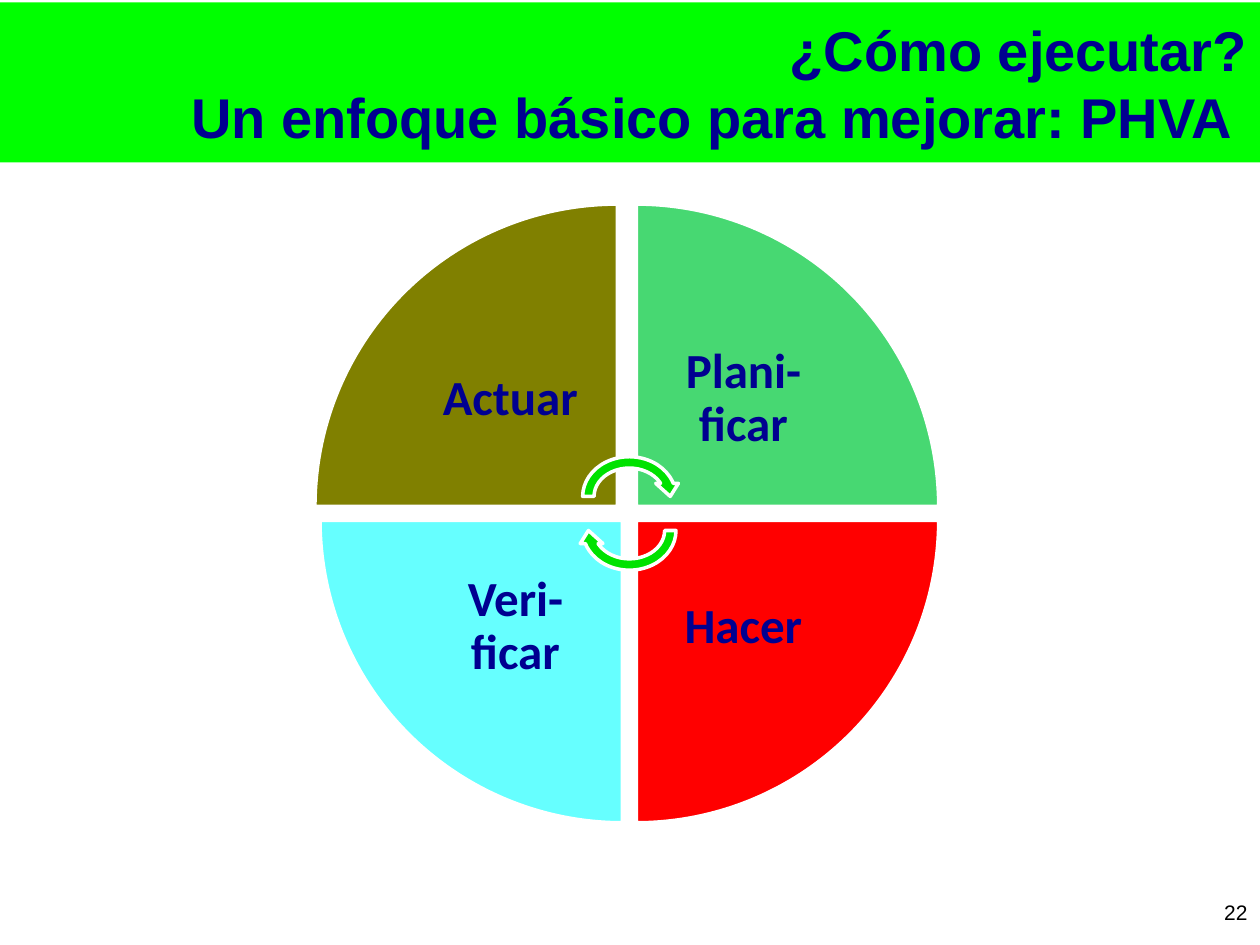
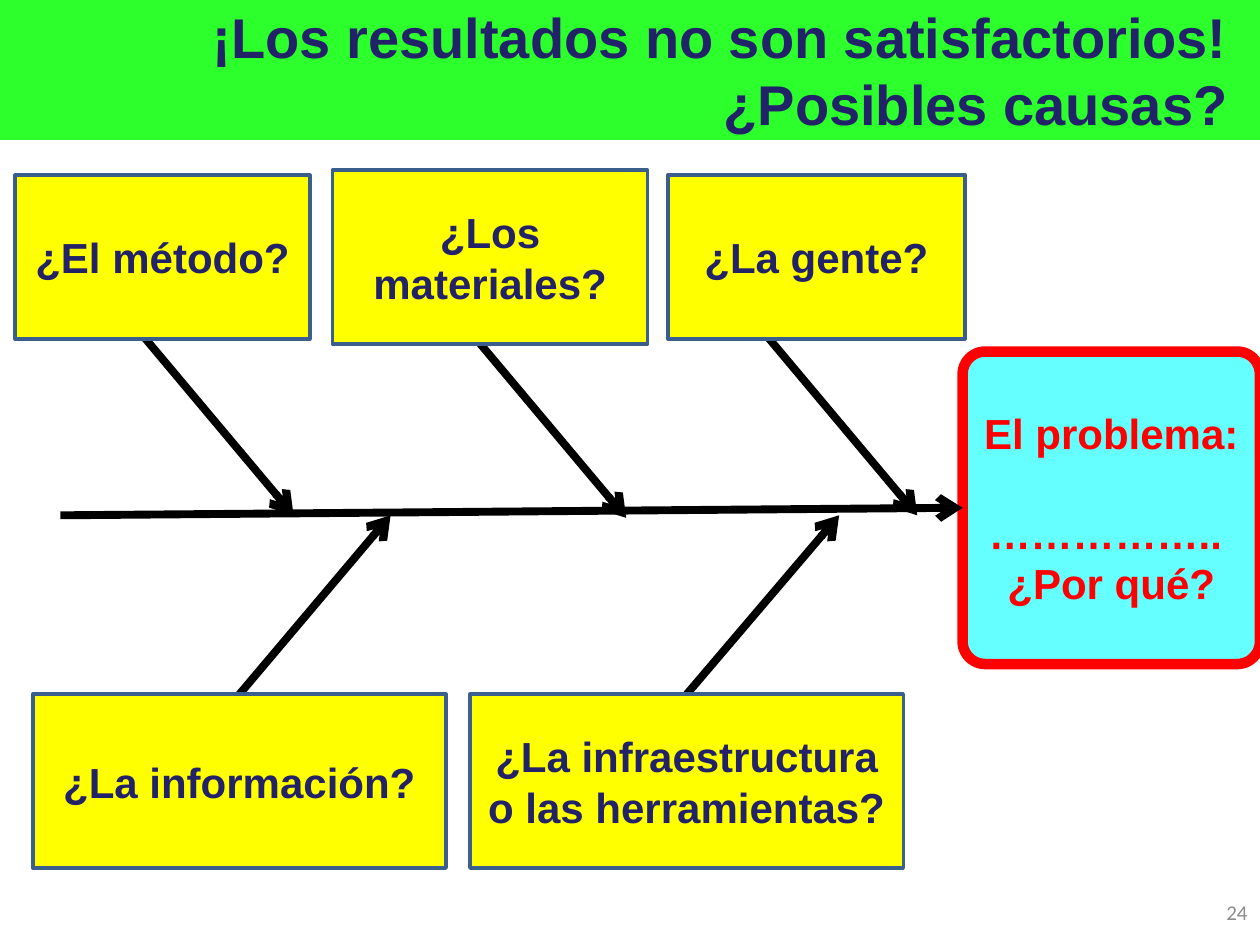
from lxml import etree
from pptx import Presentation
from pptx.dml.color import RGBColor
from pptx.enum.shapes import MSO_CONNECTOR, MSO_SHAPE
from pptx.enum.text import MSO_ANCHOR, PP_ALIGN
from pptx.oxml.ns import qn
from pptx.util import Inches, Pt

RECT, ROUND = MSO_SHAPE.RECTANGLE, MSO_SHAPE.ROUNDED_RECTANGLE
WEDGE, CYCLE_ARROW = MSO_SHAPE.PIE_WEDGE, MSO_SHAPE.CIRCULAR_ARROW
STRAIGHT = MSO_CONNECTOR.STRAIGHT
MIDDLE = MSO_ANCHOR.MIDDLE
CENTER, RIGHT = PP_ALIGN.CENTER, PP_ALIGN.RIGHT
TOP_SIDE, LEFT_SIDE = 0, 1

WHITE = RGBColor(0xFF, 0xFF, 0xFF)
BLACK = RGBColor(0x00, 0x00, 0x00)
GREY = RGBColor(0x8C, 0x8C, 0x8C)
NAVY = RGBColor(0x00, 0x00, 0x90)
INDIGO = RGBColor(0x22, 0x22, 0x68)
LIME = RGBColor(0x00, 0xFF, 0x00)
SOFT_LIME = RGBColor(0x2D, 0xFF, 0x2D)
ARROW_GREEN = RGBColor(0x00, 0xE2, 0x00)
OLIVE = RGBColor(0x80, 0x80, 0x00)
MINT = RGBColor(0x47, 0xD8, 0x72)
RED = RGBColor(0xFF, 0x00, 0x00)
CYAN = RGBColor(0x66, 0xFF, 0xFF)
YELLOW = RGBColor(0xFF, 0xFF, 0x00)
STEEL = RGBColor(0x3A, 0x5F, 0x8C)

TITLE_FONT = {"name": "Arial", "size": Pt(32), "bold": True}
PHASE_FONT = {"name": "Calibri", "size": Pt(28), "bold": True}
CAUSE_FONT = {"name": "Arial", "size": Pt(24), "bold": True}


def add_panel(slide, kind, box, fill, edge=None, edge_width=2):
    """Add a flat shape; box is left, top, width, height in inches."""
    panel = slide.shapes.add_shape(kind, *map(Inches, box))
    panel.shadow.inherit = False
    panel.fill.solid()
    panel.fill.fore_color.rgb = fill
    if edge is None:
        panel.line.fill.background()
    else:
        panel.line.color.rgb = edge
        panel.line.width = Pt(edge_width)
    return panel


def write(shape, lines, font, color, align=CENTER):
    """Fill the shape with one paragraph per line and return its text frame."""
    frame = shape.text_frame
    frame.word_wrap = True
    frame.vertical_anchor = MIDDLE
    frame.text = "\n".join(lines)
    for paragraph in frame.paragraphs:
        paragraph.alignment = align
        paragraph.font.color.rgb = color
        for run in paragraph.runs:
            run.font.color.rgb = color
            for attribute, value in font.items():
                setattr(run.font, attribute, value)
    return frame


prs = Presentation()
prs.slide_width, prs.slide_height = Inches(10), Inches(7.5)
blank = prs.slide_layouts[6]

# Title bands and page numbers
headings = [
    (["¿Cómo ejecutar?", "Un enfoque básico para mejorar: PHVA "],
     0.02, 1.27, LIME, NAVY, 0.1, "22", "Arial", BLACK),
    (["¡Los resultados no son satisfactorios! ¿Posibles causas?"],
     0, 1.11, SOFT_LIME, INDIGO, 0.25, "24", "Calibri", GREY),
]
slides = []
for lines, top, height, fill, color, inset, page, page_font, page_color in headings:
    slide = prs.slides.add_slide(blank)
    band = add_panel(slide, RECT, (0, top, 10, height), fill)
    write(band, lines, TITLE_FONT, color, RIGHT).margin_right = Inches(inset)
    number = slide.shapes.add_textbox(*map(Inches, (7.67, 6.98, 2.33, 0.52)))
    write(number, [page], {"name": page_font, "size": Pt(12)}, page_color, RIGHT)
    slides.append(slide)
cycle, fishbone = slides

# PHVA cycle: four quarters, clockwise from the top left
QUARTER, LABEL = 2.4, 1.7
phases = [
    ("Actuar", 2.5, 1.62, OLIVE),
    ("Plani-ficar", 5.05, 1.62, MINT),
    ("Hacer", 5.05, 4.13, RED),
    ("Veri-ficar", 2.54, 4.13, CYAN),
]
for turn, (phase, left, top, fill) in enumerate(phases):
    quarter = add_panel(cycle, WEDGE, (left, top, QUARTER, QUARTER), fill, WHITE)
    quarter.rotation = 90 * turn
    # Each label sits in the corner nearest the centre of the circle
    label_left = left + (QUARTER - LABEL if left < 5 else 0)
    label_top = top + (QUARTER - LABEL if top < 4 else 0)
    label = cycle.shapes.add_textbox(*map(Inches, (label_left, label_top, LABEL, LABEL)))
    frame = write(label, [phase], PHASE_FONT, NAVY)
    frame.paragraphs[0].line_spacing = 0.9
    for side in ("left", "top", "right", "bottom"):
        setattr(frame, f"margin_{side}", Inches(0.22))

for top, rotation in ((3.58, 0), (3.85, 180)):
    turn_arrow = add_panel(cycle, CYCLE_ARROW, (4.58, top, 0.83, 0.72), ARROW_GREEN, WHITE)
    turn_arrow.rotation = rotation

# Fishbone: the problem at the head, causes along the spine
problem = add_panel(fishbone, ROUND, (7.64, 2.79, 2.36, 2.48), CYAN, RED, 6)
problem.adjustments[0] = 0.076
frame = write(problem, ["El problema:", "…………….. ", "¿Por qué?"], CAUSE_FONT, RED)
frame.paragraphs[0].space_after = Pt(28)

spine = fishbone.shapes.add_connector(
    STRAIGHT, *map(Inches, (0.48, 4.09, 7.64, 4.03)))
spine.end_connect(problem, LEFT_SIDE)
bones = [spine]

BONE_RUN, BONE_RISE = 1.25, 1.49
causes = [
    ("¿El método?", (0.12, 1.39, 2.34, 1.3), 2.33, 4.09),
    ("¿Los materiales?", (2.64, 1.35, 2.5, 1.38), 4.97, 4.11),
    ("¿La gente?", (5.3, 1.39, 2.36, 1.3), 7.28, 4.09),
    ("¿La información?", (0.26, 5.51, 3.28, 1.38), 3.1, 4.09),
    ("¿La infraestructura o las herramientas?", (3.73, 5.51, 3.44, 1.38), 6.66, 4.09),
]
for cause, box, tip_x, tip_y in causes:
    below = box[1] > tip_y
    start_y = tip_y + (BONE_RISE if below else -BONE_RISE)
    bone = fishbone.shapes.add_connector(
        STRAIGHT, *map(Inches, (tip_x - BONE_RUN, start_y, tip_x, tip_y)))
    bones.append(bone)
    card = add_panel(fishbone, RECT, box, YELLOW, STEEL)
    write(card, [cause], CAUSE_FONT, INDIGO)
    if below:
        bone.begin_connect(card, TOP_SIDE)

for bone in bones:
    bone.line.color.rgb = BLACK
    bone.line.width = Pt(4.5)
    properties = bone.element.spPr
    etree.SubElement(properties.find(qn("a:ln")), qn("a:tailEnd"), type="arrow")
    etree.SubElement(properties, qn("a:effectLst"))

prs.save("out.pptx")
